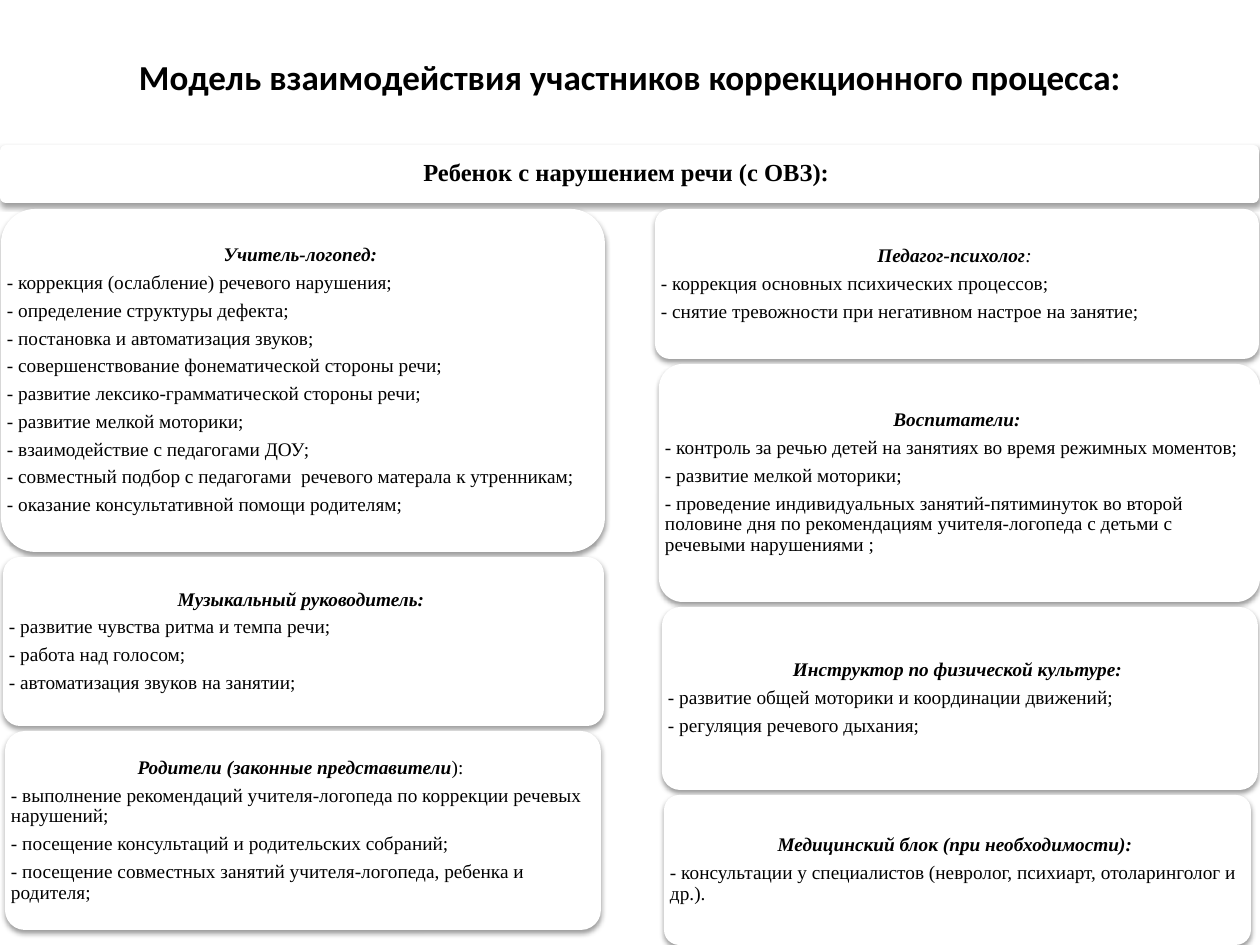
from lxml import etree
from pptx import Presentation, util as u
from pptx.dml.color import RGBColor
from pptx.enum import shapes, text
from pptx.oxml import parse_xml

PX = 914400 // 126
COLOURS = {"card": "FFFFFF", "text": "000000", "shadow": "000000"}
SERIF = "Times New Roman"

# Content: heading runs are (text, bold, italic)
TITLE = "Модель взаимодействия участников коррекционного процесса:"
BANNER = "Ребенок с нарушением речи (с ОВЗ): "
# Column: (left, width, height, heading runs, items) from top to bottom
COLUMNS = [
    [
        (1, 604, 343, [("Учитель-логопед: ", True, True)], [
            "- коррекция (ослабление) речевого нарушения;",
            "- определение структуры дефекта;",
            "- постановка и автоматизация звуков;",
            "- совершенствование фонематической стороны речи;",
            "- развитие лексико-грамматической стороны речи;",
            "- развитие мелкой моторики;",
            "- взаимодействие с педагогами ДОУ;",
            "- совместный подбор с педагогами  речевого матерала к утренникам;",
            "- оказание консультативной помощи родителям;",
        ]),
        (3, 601, 169, [("Музыкальный руководитель: ", True, True)], [
            "- развитие чувства ритма и темпа речи;",
            "- работа над голосом;",
            "- автоматизация звуков на занятии;",
        ]),
        (5, 596, 199, [("Родители (законные представители", True, True),
                       ("): ", False, False)], [
            "- выполнение рекомендаций учителя-логопеда по коррекции речевых нарушений;",
            "- посещение консультаций и родительских собраний;",
            "- посещение совместных занятий учителя-логопеда, ребенка и родителя;",
        ]),
    ],
    [
        (655, 604, 150, [("Педагог-психолог", True, True), (": ", False, True)], [
            "- коррекция основных психических процессов;",
            "- снятие тревожности при негативном настрое на занятие;",
        ]),
        (659, 601, 238, [("Воспитатели: ", True, True)], [
            "- контроль за речью детей на занятиях во время режимных моментов;",
            "- развитие мелкой моторики;",
            "- проведение индивидуальных занятий-пятиминуток во второй половине дня "
            "по рекомендациям учителя-логопеда с детьми с речевыми нарушениями ;",
        ]),
        (662, 596, 183, [("Инструктор по физической культуре: ", True, True)], [
            "- развитие общей моторики и координации движений;",
            "- регуляция речевого дыхания;",
        ]),
        (664, 587, 150, [("Медицинский блок (при необходимости): ", True, True)], [
            "- консультации у специалистов (невролог, психиарт, отоларинголог и др.).",
        ]),
    ],
]
BANNER_BOX = (0, 145, 1259, 58)
COLUMN_TOP, GAP = 209, 5

SHADOW = (
    '<a:effectLst xmlns:a="http://schemas.openxmlformats.org/drawingml/2006/main">'
    f'<a:outerShdw blurRad="{u.Pt(3.1)}" dist="{u.Pt(1.6)}" dir="5400000" rotWithShape="0">'
    f'<a:srgbClr val="{COLOURS["shadow"]}"><a:alpha val="38000"/></a:srgbClr>'
    '</a:outerShdw></a:effectLst>'
)


def style(font, size, name):
    font.size, font.name = u.Pt(size), name
    font.color.rgb = RGBColor.from_string(COLOURS["text"])


def add_card(slide, box, margin, size, heading, items=()):
    """A rounded card with its text laid over the full card area."""
    group = slide.shapes.add_group_shape()
    place = [value * PX for value in box]
    card = group.shapes.add_shape(shapes.MSO_SHAPE.ROUNDED_RECTANGLE, *place)
    card.adjustments[0] = 0.1
    card.fill.solid()
    card.fill.fore_color.rgb = RGBColor.from_string(COLOURS["card"])
    card.line.fill.background()
    card._element.spPr.append(parse_xml(SHADOW))

    frame = group.shapes.add_textbox(*place).text_frame
    frame.word_wrap = True
    frame.vertical_anchor = text.MSO_ANCHOR.MIDDLE
    frame.margin_left = frame.margin_right = margin * PX
    frame.margin_top = frame.margin_bottom = margin * PX
    for index, runs in enumerate([heading] + [[(item, False, False)] for item in items]):
        paragraph = frame.add_paragraph() if index else frame.paragraphs[0]
        paragraph.alignment = text.PP_ALIGN.LEFT if index else text.PP_ALIGN.CENTER
        paragraph.line_spacing = 0.9
        paragraph.space_after = u.Pt(4)
        for wording, bold, italic in runs:
            run = paragraph.add_run()
            run.text = wording
            style(run.font, size, SERIF)
            run.font.bold, run.font.italic = bold, italic


def main():
    presentation = Presentation()
    presentation.slide_width, presentation.slide_height = u.Inches(10), u.Inches(7.5)
    slide = presentation.slides.add_slide(presentation.slide_layouts[5])

    # Title
    title = slide.shapes.title
    title.left, title.top, title.width, title.height = (v * PX for v in (63, 38, 1134, 77))
    title.text_frame.text = TITLE
    title.text_frame.vertical_anchor = text.MSO_ANCHOR.MIDDLE
    paragraph = title.text_frame.paragraphs[0]
    paragraph.alignment = text.PP_ALIGN.CENTER
    style(paragraph.font, 20, "Calibri")
    paragraph.font.bold = True

    # Banner
    add_card(slide, BANNER_BOX, 8, 14, [(BANNER, True, False)])

    # Participants, stacked in two columns
    for column in COLUMNS:
        top = COLUMN_TOP
        for left, width, height, heading, items in column:
            add_card(slide, (left, top, width, height), 6, 11, heading, items)
            top += height + GAP

    presentation.save("out.pptx")


if __name__ == "__main__":
    main()
